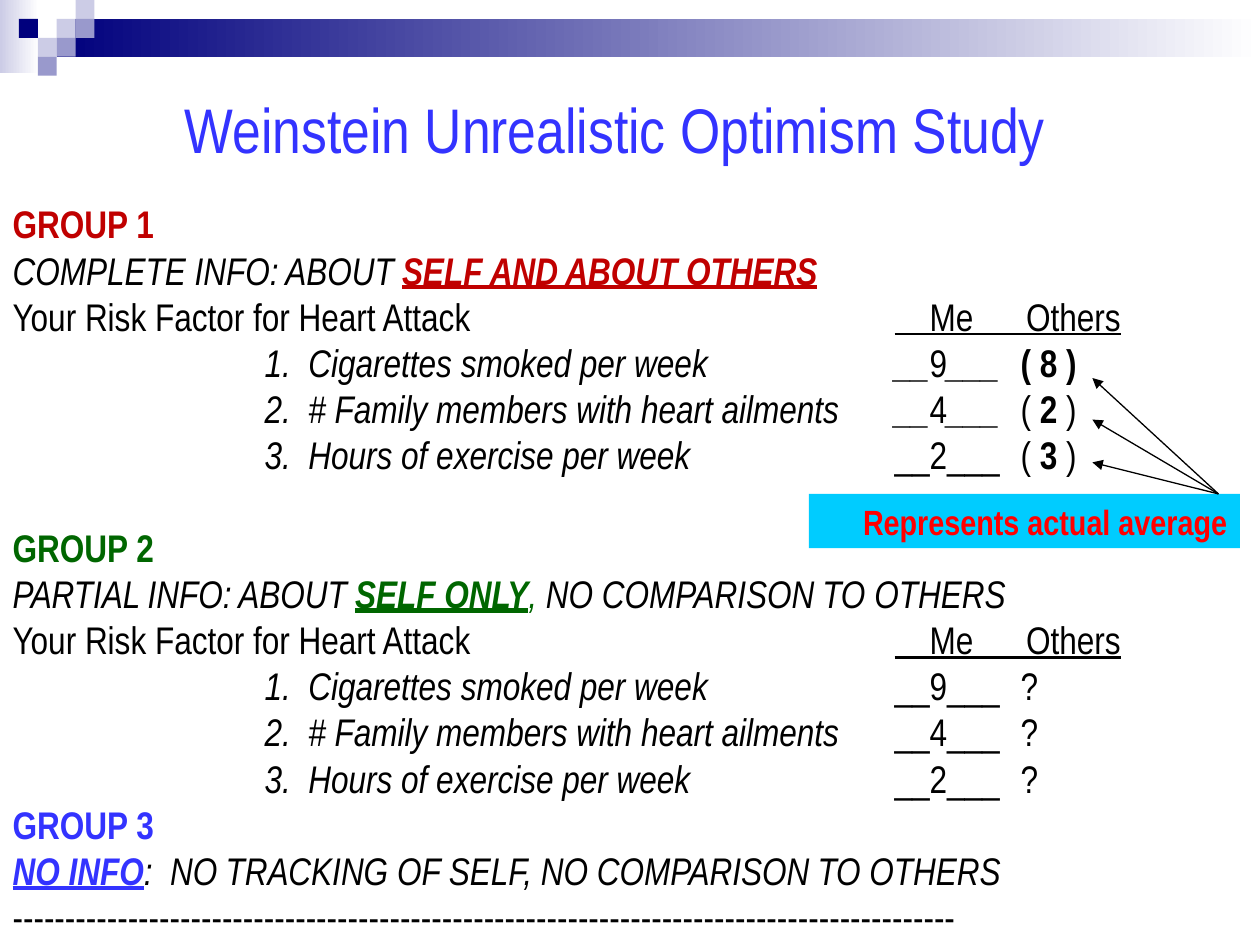
"""Build the Weinstein unrealistic optimism study slide."""
from dataclasses import dataclass

from lxml import etree
from pptx import Presentation
from pptx.dml.color import RGBColor
from pptx.enum.shapes import MSO_CONNECTOR, MSO_SHAPE
from pptx.enum.text import MSO_ANCHOR, MSO_AUTO_SIZE, PP_ALIGN
from pptx.oxml.ns import qn
from pptx.util import Inches, Pt

RECT = MSO_SHAPE.RECTANGLE
STRAIGHT = MSO_CONNECTOR.STRAIGHT
CENTER, RIGHT = PP_ALIGN.CENTER, PP_ALIGN.RIGHT
TOP, MIDDLE = MSO_ANCHOR.TOP, MSO_ANCHOR.MIDDLE
NO_FIT = MSO_AUTO_SIZE.NONE

FONT = "Arial Narrow"
BLACK = RGBColor(0x00, 0x00, 0x00)
WHITE = RGBColor(0xFF, 0xFF, 0xFF)
NAVY = RGBColor(0x00, 0x00, 0x7D)
LAVENDER = RGBColor(0xCC, 0xCC, 0xE6)
PERIWINKLE = RGBColor(0x99, 0x99, 0xCC)
BLUE = RGBColor(0x33, 0x33, 0xFF)
DARK_RED = RGBColor(0xC0, 0x00, 0x00)
GREEN = RGBColor(0x00, 0x66, 0x00)
CYAN = RGBColor(0x00, 0xCC, 0xFF)
RED = RGBColor(0xFF, 0x00, 0x00)


@dataclass(frozen=True)
class Box:
    left: float
    top: float
    width: float
    height: float
    color: RGBColor
    fades: bool = False


@dataclass(frozen=True)
class Span:
    text: str
    style: str = ""
    color: RGBColor = BLACK


@dataclass(frozen=True)
class Factor:
    label: str
    tabs: str
    mine: str


CELL = 0.15
BANNER = [
    Box(0, 0, 0.31, 0.58, LAVENDER, True),
    Box(0.45, CELL, 9.55, 0.3, NAVY, True),
] + [
    Box(col * CELL, row * CELL, CELL, CELL, color)
    for col, row, color in [
        (3, 1, LAVENDER), (4, 0, LAVENDER), (4, 1, PERIWINKLE), (2, 2, LAVENDER),
        (1, 1, NAVY), (3, 2, PERIWINKLE), (2, 3, PERIWINKLE),
    ]
]

FACTORS = [
    Factor("1.  Cigarettes smoked per week", "\t\t", "9"),
    Factor("2.  # Family members with heart ailments", "\t", "4"),
    Factor("3.  Hours of exercise per week", "\t\t", "2"),
]
AVERAGES = [
    [Span("( 8 )", "b")],
    [Span("( "), Span("2", "b"), Span(" )")],
    [Span("( "), Span("3", "b"), Span(" )")],
]
BLANK_STYLES = ["i", "i", ""]
HEADER = [
    Span("Your Risk Factor for Heart Attack\t\t\t\t"),
    Span("    Me      Others", "u"),
]


def factor_line(factor: Factor, answer: list[Span], blank: str = "") -> list[Span]:
    return [
        Span("\t\t" + factor.label, "i"),
        Span(factor.tabs + "__", blank),
        Span(factor.mine),
        Span("___ \t", blank),
        *answer,
    ]


LINES = [
    [Span("GROUP 1", "b", DARK_RED)],
    [Span("COMPLETE INFO: ABOUT ", "i"), Span("SELF AND ABOUT OTHERS", "biu", DARK_RED)],
    HEADER,
    *map(factor_line, FACTORS, AVERAGES, BLANK_STYLES),
    [Span("GROUP 2", "b", GREEN)],
    [
        Span("PARTIAL INFO: ABOUT ", "i"),
        Span("SELF ONLY", "biu", GREEN),
        Span(", ", "i", GREEN),
        Span("NO COMPARISON TO OTHERS", "i"),
    ],
    HEADER,
    *[factor_line(factor, [Span("?")]) for factor in FACTORS],
    [Span("GROUP 3", "b", BLUE)],
    [
        Span("NO INFO", "biu", BLUE),
        Span(":  NO TRACKING OF SELF, NO COMPARISON TO OTHERS", "i"),
    ],
    [Span("-" * 90)],
]
GROUP_2_LINE = 6


def place(sp, left: float, top: float, width: float, height: float) -> None:
    sp.left, sp.top = Inches(left), Inches(top)
    sp.width, sp.height = Inches(width), Inches(height)


def add_box(s, box: Box):
    sp = s.shapes.add_shape(
        RECT, Inches(box.left), Inches(box.top), Inches(box.width), Inches(box.height)
    )
    sp.shadow.inherit = False
    sp.line.fill.background()
    if box.fades:
        sp.fill.gradient()
        sp.fill.gradient_angle = 0
        for stop, color in zip(sp.fill.gradient_stops, (box.color, WHITE)):
            stop.color.rgb = color
    else:
        sp.fill.solid()
        sp.fill.fore_color.rgb = box.color
    return sp


def set_text(sp, text: str, size: int, color: RGBColor, align, bold: bool = False) -> None:
    tf = sp.text_frame
    tf.auto_size, tf.word_wrap, tf.vertical_anchor = NO_FIT, True, MIDDLE
    p = tf.paragraphs[0]
    p.text, p.alignment = text, align
    p.font.name, p.font.size, p.font.bold = FONT, Pt(size), bold
    p.font.color.rgb = color


def add_line(p, spans: list[Span], gap: float) -> None:
    p.font.name, p.font.size = FONT, Pt(22)
    p.space_before = Pt(gap)
    pPr = p._p.get_or_add_pPr()
    for name, value in (("marL", 0), ("indent", 0), ("defTabSz", Inches(1))):
        pPr.set(name, str(value))
    pPr.insert_element_before(pPr.makeelement(qn("a:buNone")), "a:tabLst", "a:defRPr")
    for span in spans:
        r = p.add_run()
        r.text = span.text
        r.font.name, r.font.size = FONT, Pt(22)
        r.font.bold = "b" in span.style
        r.font.italic = "i" in span.style
        r.font.underline = "u" in span.style
        r.font.color.rgb = span.color


def add_arrow(s, x1: float, y1: float, x2: float, y2: float) -> None:
    cxn = s.shapes.add_connector(STRAIGHT, Inches(x1), Inches(y1), Inches(x2), Inches(y2))
    cxn.line.color.rgb, cxn.line.width = BLACK, Pt(0.75)
    etree.SubElement(cxn.line._get_or_add_ln(), qn("a:tailEnd"), type="triangle")
    etree.SubElement(cxn._element.spPr, qn("a:effectLst"))


def main() -> None:
    prs = Presentation()
    prs.slide_width, prs.slide_height = Inches(10), Inches(7.5)
    s = prs.slides.add_slide(prs.slide_layouts[1])
    title, body = s.placeholders

    for box in BANNER:
        add_box(s, box)

    place(title, 0.92, 0.67, 7.92, 0.7)
    set_text(title, "Weinstein Unrealistic Optimism Study", 36, BLUE, CENTER)

    place(body, 0, 1.54, 10, 6.02)
    tf = body.text_frame
    tf.auto_size, tf.word_wrap, tf.vertical_anchor = NO_FIT, True, TOP
    for i, spans in enumerate(LINES):
        p = tf.add_paragraph() if i else tf.paragraphs[0]
        add_line(p, spans, 26.4 if i == GROUP_2_LINE else 0)

    label = add_box(s, Box(6.42, 3.92, 3.42, 0.43, CYAN))
    set_text(label, "Represents actual average", 20, RED, RIGHT, bold=True)
    for y in (3, 3.33, 3.67):
        add_arrow(s, 9.67, 3.92, 8.67, y)

    prs.save("out.pptx")


if __name__ == "__main__":
    main()
